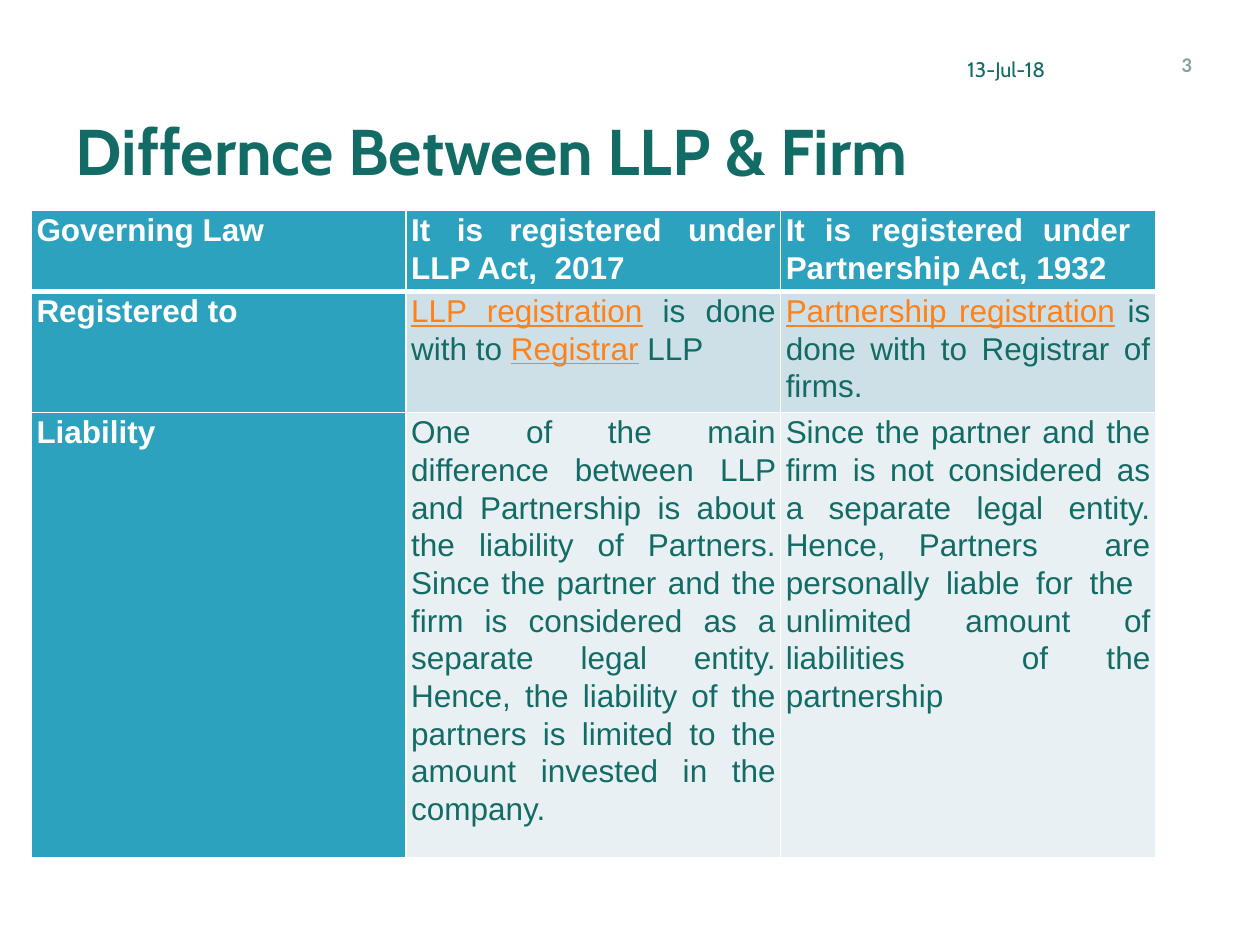
import dataclasses

import pptx
import pptx.dml.color
import pptx.enum.text
import pptx.oxml
import pptx.oxml.ns
import pptx.util

Inches = pptx.util.Inches
Pt = pptx.util.Pt
Align = pptx.enum.text.PP_ALIGN
Anchor = pptx.enum.text.MSO_ANCHOR


@dataclasses.dataclass(frozen=True)
class Theme:
    ink: str = "126C65"
    link: str = "FF8119"
    mute: str = "8AA29F"
    white: str = "FFFFFF"
    head: str = "2DA2BF"
    bands: tuple = ("E8F0F4", "CDE0E8")
    face: str = "Cabin"
    body: str = "Arial"
    page: str = "Calibri"
    big: float = 36.9
    text: float = 18
    small: float = 12


class Deck:
    def __init__(self, theme):
        self.theme = theme
        self.file = pptx.Presentation()
        self.file.slide_width = Inches(10)
        self.file.slide_height = Inches(7.5)
        self.slide = self.file.slides.add_slide(self.file.slide_layouts[5])

    def style(self, run, face, size, color, bold=False):
        run.font.name = face
        run.font.size = Pt(size)
        run.font.bold = bold
        run.font.color.rgb = pptx.dml.color.RGBColor.from_string(color)

    def fill_text(self, shape, text, face, size, color, bold=False, align=Align.LEFT):
        frame = shape.text_frame
        frame.text = text
        frame.word_wrap = True
        frame.vertical_anchor = Anchor.MIDDLE
        line = frame.paragraphs[0]
        line.alignment = align
        self.style(line.runs[0], face, size, color, bold)

    def title(self, text, box):
        shape = self.slide.shapes.title
        shape.left, shape.top, shape.width, shape.height = map(Inches, box)
        self.fill_text(shape, text, self.theme.face, self.theme.big, self.theme.ink, True)

    def label(self, text, box, face, color, bold=False, align=Align.LEFT):
        shape = self.slide.shapes.add_textbox(*map(Inches, box))
        self.fill_text(shape, text, face, self.theme.small, color, bold, align)

    def edge(self, cell, side, width):
        line = pptx.oxml.parse_xml(
            f'<a:{side} {pptx.oxml.ns.nsdecls("a")} w="{Pt(width)}"><a:solidFill>'
            f'<a:srgbClr val="{self.theme.white}"/></a:solidFill></a:{side}>'
        )
        cell._tc.get_or_add_tcPr().append(line)

    def cell(self, cell, text, row, col):
        theme = self.theme
        strong = row == 0 or col == 0
        cell.margin_left = cell.margin_right = Inches(0.04)
        cell.margin_top = cell.margin_bottom = 0
        for side in ("lnL", "lnR", "lnT", "lnB"):
            thick = (row, side) in ((0, "lnB"), (1, "lnT"))
            self.edge(cell, side, 3 if thick else 1)
        fill = theme.head if strong else theme.bands[row % 2]
        cell.fill.solid()
        cell.fill.fore_color.rgb = pptx.dml.color.RGBColor.from_string(fill)
        line = cell.text_frame.paragraphs[0]
        line.alignment = Align.JUSTIFY
        line.line_spacing = 1.07
        for index, part in enumerate(text.split("|")):
            if not part:
                continue
            linked = index % 2 == 1
            run = line.add_run()
            run.text = part
            color = theme.white if strong else theme.link if linked else theme.ink
            self.style(run, theme.body, theme.text, color, strong)
            run.font.underline = linked

    def table(self, rows, left, top, width, heights):
        count = len(rows[0])
        frame = self.slide.shapes.add_table(
            len(rows), count, Inches(left), Inches(top), Inches(width), Inches(sum(heights))
        )
        grid = frame.table
        for col in grid.columns:
            col.width = Inches(width / count)
        for row, (texts, height) in enumerate(zip(rows, heights)):
            grid.rows[row].height = Inches(height)
            for col, text in enumerate(texts):
                self.cell(grid.cell(row, col), text, row, col)


ROWS = (
    (
        "Governing Law  ",
        "It is registered under LLP Act,  2017",
        "It is registered under  Partnership Act, 1932",
    ),
    (
        "Registered to",
        "|LLP registration| is done with to |Registrar| LLP",
        "|Partnership registration| is done with to Registrar of firms.",
    ),
    (
        "Liability",
        "One of the main difference between LLP and Partnership is about the "
        "liability of Partners. Since the partner and the firm is considered as a "
        "separate legal entity. Hence, the liability of the partners is limited to "
        "the amount invested in the company.",
        "Since the partner and the firm is not considered as a separate legal "
        "entity. Hence, Partners  are personally liable for the  unlimited amount "
        "of liabilities  of the partnership",
    ),
)


def main():
    theme = Theme()
    deck = Deck(theme)
    deck.label("3", (9.06, 0.31, 0.5, 0.4), theme.page, theme.mute, True, Align.RIGHT)
    deck.label("13-Jul-18", (7.58, 0.35, 1.48, 0.4), theme.face, theme.ink)
    deck.table(ROWS, 0.25, 1.67, 8.92, (0.59, 0.9, 3.29))
    deck.title("Differnce Between LLP & Firm", (0.5, 0.83, 8.42, 0.72))
    deck.file.save("out.pptx")


if __name__ == "__main__":
    main()
